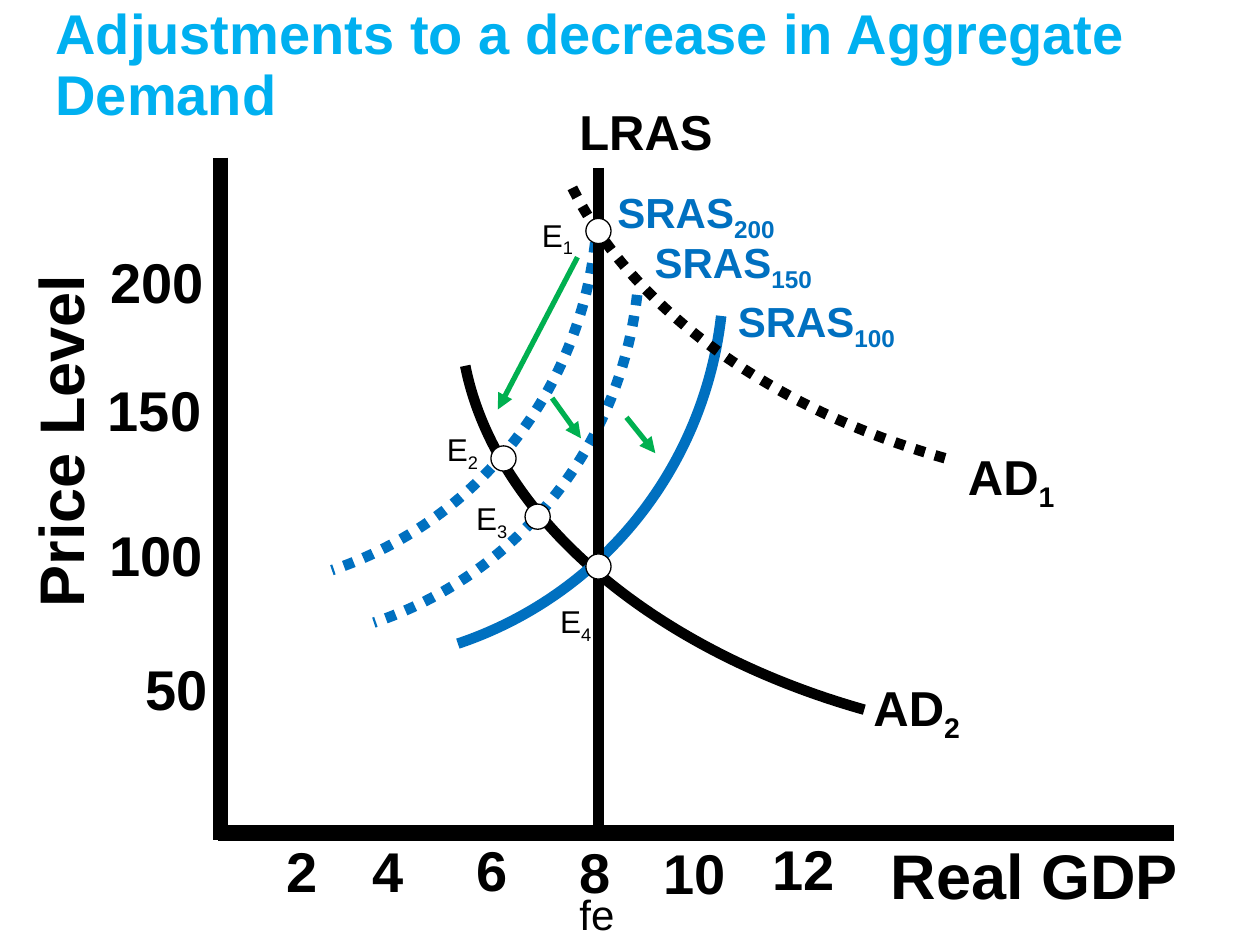
import copy
import math
import pptx
import pptx.util
import pptx.dml.color
import pptx.enum.dml
import pptx.enum.shapes
import pptx.enum.text
import pptx.oxml
import pptx.oxml.ns
import lxml.etree

Pt = pptx.util.Pt
qn = pptx.oxml.ns.qn
ALIGN = pptx.enum.text.PP_ALIGN
SHAPE = pptx.enum.shapes.MSO_SHAPE
BLACK = pptx.dml.color.RGBColor(0x00, 0x00, 0x00)
WHITE = pptx.dml.color.RGBColor(0xFF, 0xFF, 0xFF)
SKY = pptx.dml.color.RGBColor(0x00, 0xB0, 0xF0)
BLUE = pptx.dml.color.RGBColor(0x00, 0x70, 0xC0)
GREEN = pptx.dml.color.RGBColor(0x00, 0xB0, 0x50)
FONT = "Arial"

presentation = pptx.Presentation()
presentation.slide_width = Pt(720)
presentation.slide_height = Pt(540)
slide = presentation.slides.add_slide(presentation.slide_layouts[5])


def add_label(text, left, top, width, size, subscript="", color=BLACK,
              bold=True, align=ALIGN.LEFT, spacing=0.9, filled=False):
    """Add one line of text, on a white rectangle if filled."""
    frame = [Pt(left), Pt(top), Pt(width), Pt(size * 1.2 * spacing + 7.2)]
    if filled:
        box = slide.shapes.add_shape(SHAPE.RECTANGLE, *frame)
        box.shadow.inherit = False
        box.fill.solid()
        box.fill.fore_color.rgb = WHITE
        box.line.fill.background()
    else:
        box = slide.shapes.add_textbox(*frame)
    box.text_frame.word_wrap = True
    box.text_frame.vertical_anchor = pptx.enum.text.MSO_ANCHOR.TOP
    paragraph = box.text_frame.paragraphs[0]
    paragraph.alignment = align
    paragraph.line_spacing = spacing
    for part in filter(None, (text, subscript)):
        run = paragraph.add_run()
        run.text = part
        run.font.name = FONT
        run.font.size = Pt(size)
        run.font.bold = bold
        run.font.color.rgb = color
    if subscript:
        run._r.get_or_add_rPr().set("baseline", "-25000")
    return box


def add_line(start, end, color, width, arrow=False):
    connector = slide.shapes.add_connector(
        pptx.enum.shapes.MSO_CONNECTOR.STRAIGHT, *map(Pt, start + end))
    connector.line.color.rgb = color
    connector.line.width = Pt(width)
    properties = connector._element.spPr
    if arrow:
        outline = properties.find(qn("a:ln"))
        lxml.etree.SubElement(outline, qn("a:tailEnd"), type="triangle")
    lxml.etree.SubElement(properties, qn("a:effectLst"))


# Title
title = slide.shapes.title
title.left, title.top, title.width, title.height = Pt(24.5), Pt(0), Pt(665.25), Pt(77)
title.fill.solid()
title.fill.fore_color.rgb = WHITE
title.text_frame.word_wrap = True
title.text_frame.vertical_anchor = pptx.enum.text.MSO_ANCHOR.TOP
paragraph = title.text_frame.paragraphs[0]
paragraph.alignment = ALIGN.LEFT
paragraph.line_spacing = 0.9
run = paragraph.add_run()
run.text = "Adjustments to a decrease in Aggregate Demand"
run.font.name = FONT
run.font.size = Pt(32)
run.font.bold = True
run.font.color.rgb = SKY

# Axes with their scales and titles
for text, left, top, width, filled in [
        ("200", 56, 142, 96, True), ("150", 54.5, 215.5, 105, False),
        ("100", 55.5, 298, 98.5, True), ("50", 76, 374.5, 84, False)]:
    level_label = add_label(text, left, top, width, 32, filled=filled)
    if text == "100":
        level_label.line.color.rgb = WHITE
        level_label.line.width = Pt(0.75)
for text, left, top, width in [("2", 145.5, 479, 54), ("4", 198, 479, 48),
                               ("6", 260, 478, 42), ("8", 316, 479.5, 48),
                               ("10", 366.25, 480, 61), ("12", 426, 477.75, 66)]:
    add_label(text, left, top, width, 32, align=ALIGN.CENTER)
price_title = add_label("Price Level", -95.25, 229, 264, 36, align=ALIGN.CENTER)
price_title.rotation = 270
add_label("Real GDP", 498, 479.5, 186, 36, align=ALIGN.CENTER)
add_label("fe", 324, 509.75, 54, 24, bold=False, spacing=0.8)
add_line((124.5, 476), (671, 476), BLACK, 9)
add_line((126, 90), (126, 480), BLACK, 9)

# Curves: four Bézier control points and the corner of their sector,
# centre of the frame, rotation, colour, dotted
sras = [(412.5, 180.75), (402.5, 268), (344, 340.5), (262, 368), (191.5, 157.75)]
sras_curves = [
    ([(x + shift_x, y + shift_y) for x, y in sras],
     (290.5 + shift_x, 269.25 + shift_y), 96.4, BLUE, shift_x != 0)
    for shift_x, shift_y in [(0, 0), (-48, -12), (-72, -42)]]
ad_curves = [
    ([(540.75, 260.75), (439, 232), (359.25, 172.75), (326.25, 103), (644.5, 56)],
     (477, 144.75), 187, BLACK, True),
    ([(494.5, 405.5), (372.25, 371), (283.5, 294.5), (266.5, 209), (598.5, 201)],
     (422, 288), 187, BLACK, False),
]
ad_1, ad_2 = ad_curves
for controls, (center_x, center_y), rotation, color, dotted in [
        ad_2, sras_curves[0], ad_1, *sras_curves[1:]]:
    cosine, sine = math.cos(math.radians(rotation)), math.sin(math.radians(rotation))
    points = []
    for x, y in controls:
        x, y = x - center_x, y - center_y
        points.append((Pt(center_x + x * cosine + y * sine),
                       Pt(center_y - x * sine + y * cosine)))
    builder = slide.shapes.build_freeform(*points[0])
    builder.add_line_segments(points[1:], close=False)
    curve = builder.convert_to_shape()
    curve.rotation = rotation
    curve.shadow.inherit = False
    curve.fill.background()
    curve.line.color.rgb = color
    curve.line.width = Pt(6)
    if dotted:
        curve.line.dash_style = pptx.enum.dml.MSO_LINE.ROUND_DOT

    # Turn three line segments into one Bézier arc; only the arc has an outline
    arc = next(curve._element.iter(qn("a:path")))
    segments = arc.findall(qn("a:lnTo"))
    bezier = lxml.etree.Element(qn("a:cubicBezTo"))
    for segment in segments[:3]:
        bezier.append(segment[0])
        arc.remove(segment)
    arc.insert(1, bezier)
    sector = copy.deepcopy(arc)
    sector.set("stroke", "0")
    lxml.etree.SubElement(sector, qn("a:close"))
    arc.remove(segments[3])
    arc.set("fill", "none")
    arc.addnext(sector)

add_line((342, 96), (342, 474), BLACK, 6)

# Curve names
add_label("LRAS", 324, 58.5, 144, 28)
add_label("AD", 546, 252, 96, 28, "1")
add_label("AD", 492, 384, 96, 28, "2")
for level, left, top, width in [("100", 414.5, 165.5, 126), ("150", 367, 132, 126),
                                ("200", 345.75, 103.25, 144)]:
    add_label("SRAS", left, top, width, 24, level, BLUE)

# Adjustment arrows
for start, end in [((330, 147), (284.5, 234)), ((358, 238.5), (374.5, 259)),
                   ((315.5, 227.5), (332, 250.5))]:
    add_line(start, end, GREEN, 3, arrow=True)

# Equilibrium points: centre of the marker, then left, top and width of its name
equilibria = [((342, 132), (302.5, 120, 48)), ((287.75, 262), (248.25, 242.5, 48)),
              ((307.25, 295.25), (265, 281.75, 60)), ((342, 323.75), (313, 340.75, 60))]
diameter = 14.4
for number, ((x, y), (left, top, width)) in enumerate(equilibria, start=1):
    marker = slide.shapes.add_shape(
        SHAPE.OVAL, Pt(x - diameter / 2), Pt(y - diameter / 2), Pt(diameter), Pt(diameter))
    marker.shadow.inherit = False
    marker.fill.solid()
    marker.fill.fore_color.rgb = WHITE
    marker.line.color.rgb = BLACK
    marker.line.width = Pt(0.75)
    add_label("E", left, top, width, 18, str(number), bold=False)

presentation.save("out.pptx")
